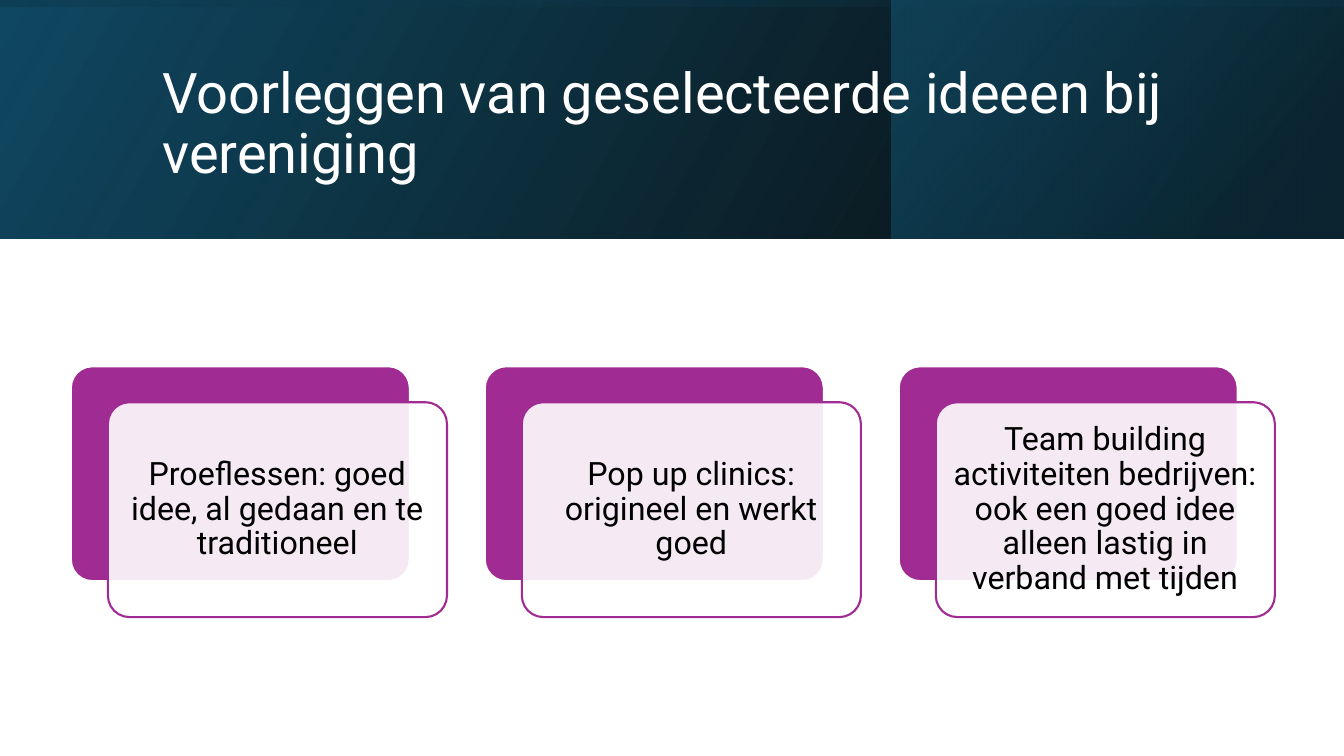
from pptx import Presentation
from pptx.dml.color import RGBColor
from pptx.enum import shapes, text
from pptx.oxml import parse_xml
from pptx.oxml.ns import nsdecls
from pptx.util import Pt

COLORS = {
    "white": "FFFFFF", "black": "000000", "purple": "A02B93",
    "blue": "104862", "deep": "0B3041", "teal": "156082",
}
FONT = "Roboto"
IDEAS = [
    "Proeflessen: goed idee, al gedaan en te traditioneel",
    "Pop up clinics: origineel en werkt goed",
    "Team building activiteiten bedrijven: ook een goed idee "
    "alleen lastig in verband met tijden",
]


def rgb(name):
    return RGBColor.from_string(COLORS[name])


def write(sp, content, size, color, align):
    tf = sp.text_frame
    tf.word_wrap = True
    tf.vertical_anchor = text.MSO_ANCHOR.MIDDLE
    tf.text = content
    p = tf.paragraphs[0]
    p.alignment = align
    p.line_spacing = 0.9
    r = p.runs[0]
    r.font.size = Pt(size)
    r.font.name = FONT
    r.font.color.rgb = rgb(color)


def gradient_panel(s, x, y, w, h, stops, angle, rotation=0):
    """Mirrored rectangle; stops are (position %, colour, opacity %)."""
    sp = s.shapes.add_shape(shapes.MSO_SHAPE.RECTANGLE, Pt(x), Pt(y), Pt(w), Pt(h))
    sp.shadow.inherit = False
    sp.line.fill.background()
    sp.rotation = rotation
    sp.fill.gradient()
    spPr = sp._element.spPr
    spPr.xfrm.set("flipH", "1")
    marks = "".join(
        f'<a:gs pos="{pos * 1000}"><a:srgbClr val="{COLORS[color]}">'
        f'<a:alpha val="{opacity * 1000}"/></a:srgbClr></a:gs>'
        for pos, color, opacity in stops)
    spPr.replace(spPr.gradFill, parse_xml(
        f'<a:gradFill {nsdecls("a")} rotWithShape="1"><a:gsLst>{marks}</a:gsLst>'
        f'<a:lin ang="{angle * 60000}" scaled="0"/></a:gradFill>'))


def header(s, x, y, w, h, title):
    # Layered gradients
    gradient_panel(s, x, y, w, h, [(0, "black", 96), (100, "blue", 100)], 330)
    side = 323
    gradient_panel(s, x + w - side, y, side, h,
                   [(19, "deep", 68), (100, "teal", 48)], 320)
    # Upright panel turned on its side to cover the whole band
    gradient_panel(s, x + (w - h) / 2, y + (h - w) / 2, h, w,
                   [(23, "blue", 16), (99, "black", 45)], 350, 270)
    # Title
    tb = s.shapes.add_textbox(Pt(x + 109), Pt(y + 27.4), Pt(765), Pt(124))
    write(tb, title, 40, "white", text.PP_ALIGN.LEFT)


def rounded(s, x, y, w, h, fill, line):
    sp = s.shapes.add_shape(shapes.MSO_SHAPE.ROUNDED_RECTANGLE,
                            Pt(x), Pt(y), Pt(w), Pt(h))
    sp.adjustments[0] = 0.1
    sp.shadow.inherit = False
    sp.fill.solid()
    sp.fill.fore_color.rgb = rgb(fill)
    sp.line.color.rgb = rgb(line)
    sp.line.width = Pt(1.5)
    return sp


def idea_card(s, x, y, w, h, idea):
    shift = 26.5
    w, h = w - shift, h - shift
    # Purple back plate
    rounded(s, x, y, w, h, "purple", "white")
    # Translucent front plate with the text
    front = rounded(s, x + shift, y + shift - 0.8, w, h, "white", "purple")
    color = front._element.spPr.find(".//{*}solidFill/{*}srgbClr")
    color.append(parse_xml(f'<a:alpha {nsdecls("a")} val="90000"/>'))
    tf = front.text_frame
    tf.margin_left = tf.margin_right = tf.margin_top = tf.margin_bottom = Pt(7.2)
    write(front, idea, 23, "black", text.PP_ALIGN.CENTER)


def idea_row(s, x, y, w, h, ideas):
    gap = 27
    card = (w - gap * (len(ideas) - 1)) / len(ideas)
    for i, idea in enumerate(ideas):
        idea_card(s, x + i * (card + gap), y, card, h, idea)


def main():
    prs = Presentation()
    prs.slide_width, prs.slide_height = Pt(960), Pt(540)
    s = prs.slides.add_slide(prs.slide_layouts[6])
    header(s, 0, 0, 960, 170.6, "Voorleggen van geselecteerde ideeen bij vereniging")
    idea_row(s, 50.6, 261.6, 860, 180, IDEAS)
    prs.save("out.pptx")


if __name__ == "__main__":
    main()
